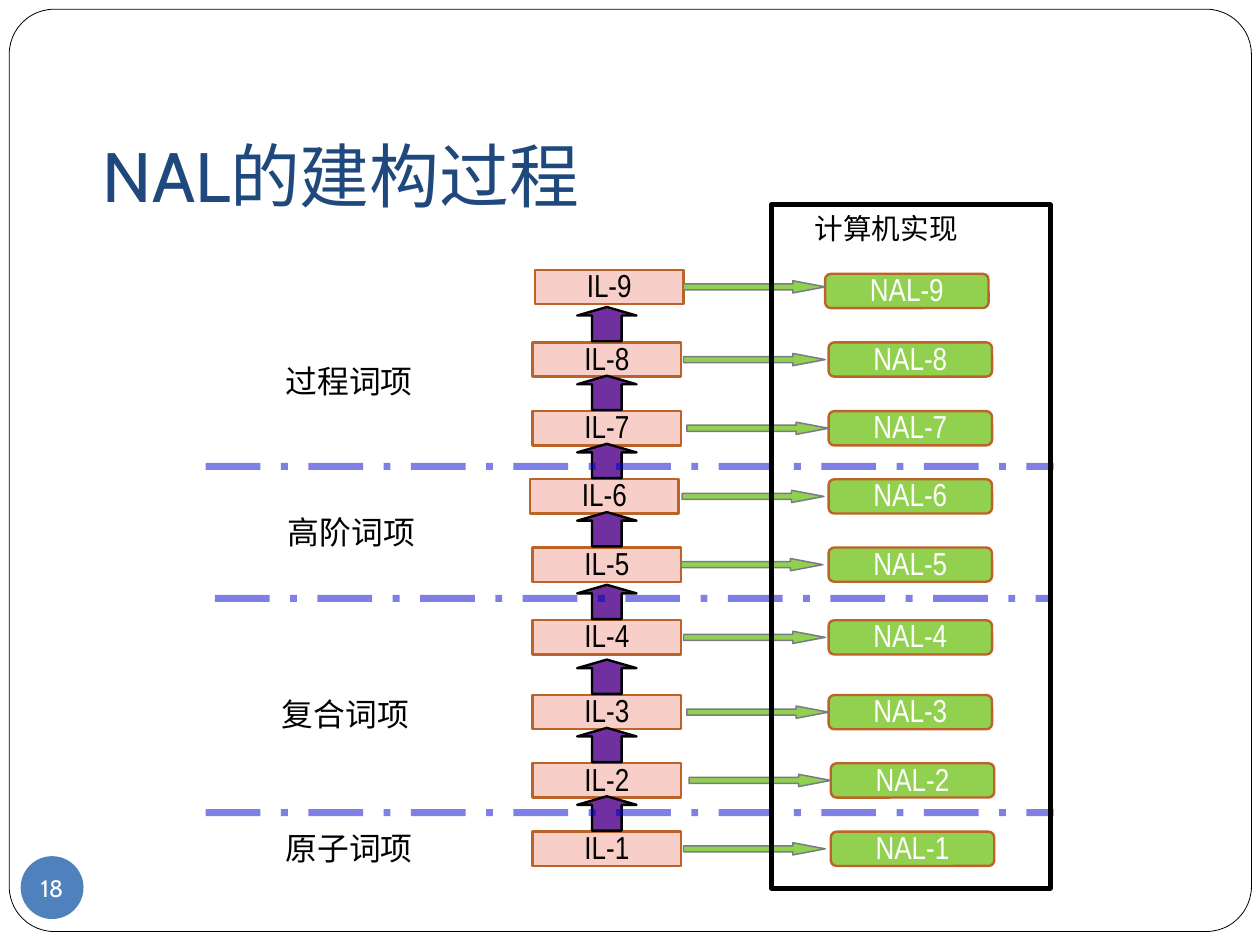
from dataclasses import dataclass

from lxml.etree import SubElement
from pptx import Presentation
from pptx.dml.color import RGBColor
from pptx.enum.dml import MSO_LINE
from pptx.enum.shapes import MSO_CONNECTOR, MSO_SHAPE as SHAPE
from pptx.enum.text import MSO_ANCHOR as ANCHOR, PP_ALIGN as ALIGN
from pptx.oxml.ns import qn
from pptx.util import Pt

TITLE = "NAL的建构过程"
PAGE = "18"
FRAME_LABEL = "计算机实现"

# level, top, IL left, arrow left, NAL left
LEVELS = [
    (9, 169.9, 337, 430.6, 519.8),
    (8, 215.7, 335.5, 430.6, 522),
    (7, 259, 335.5, 432.7, 522),
    (6, 301.9, 334, 429.8, 522),
    (5, 344.9, 335.5, 429.1, 522),
    (4, 390.7, 335.5, 430.6, 522),
    (3, 437.8, 335.5, 432.7, 522),
    (2, 480.8, 335.5, 434.2, 523.4),
    (1, 523.9, 335.5, 430.6, 523.4),
]
# text, left, top
TERMS = [
    ("过程词项", 172.8, 226.6),
    ("高阶词项", 174.2, 321.6),
    ("复合词项", 170.6, 436.1),
    ("原子词项", 172.8, 520.4),
]
# y, from x, to x
DIVIDERS = [(511.9, 129.6, 663.8), (376.9, 135.4, 661.7), (293.8, 129.6, 663.8)]

BOX_H, IL_W, NAL_W = 21.6, 93.6, 103
UP_X, UP_W, UP_RISE = 363.6, 37.4, 22.3
LINK_W, LINK_H = 89.3, 7.7
TOP_NAL_DROP = 2.6


@dataclass(frozen=True)
class Theme:
    title: str = "1F497D"
    badge: str = "4F81BD"
    il: str = "F8CFC8"
    nal: str = "92D050"
    edge: str = "BB6328"
    up: str = "7030A0"
    link_edge: str = "777C84"
    divider: str = "0000CC"
    black: str = "000000"
    white: str = "FFFFFF"
    head_font: str = "Cabin"
    body_font: str = "Arial Narrow"
    frame_font: str = "Arial"
    title_size: int = 44
    body_size: int = 20
    frame_size: int = 18
    page_size: int = 15


T = Theme()


def rgb(color):
    return RGBColor.from_string(color)


def add_shape(s, kind, box, fill=None, line=None, width=1.5, adj=()):
    sp = s.shapes.add_shape(kind, *map(Pt, box))
    sp.shadow.inherit = False
    for i, value in enumerate(adj):
        sp.adjustments[i] = value
    if fill:
        sp.fill.solid()
        sp.fill.fore_color.rgb = rgb(fill)
    else:
        sp.fill.background()
    if line:
        sp.line.color.rgb = rgb(line)
        sp.line.width = Pt(width)
    else:
        sp.line.fill.background()
    return sp


def write(sp, text, size, color, font=T.body_font, align=ALIGN.CENTER,
          anchor=ANCHOR.MIDDLE, insets=(7.2, 3.6, 7.2, 3.6), spacing=0.93):
    tf = sp.text_frame
    tf.word_wrap = True
    tf.vertical_anchor = anchor
    tf.margin_left, tf.margin_top, tf.margin_right, tf.margin_bottom = map(Pt, insets)
    tf.text = text
    p = tf.paragraphs[0]
    p.alignment = align
    p.line_spacing = spacing
    r = p.runs[0]
    r.font.size = Pt(size)
    r.font.name = font
    r.font.color.rgb = rgb(color)


def add_label(s, box, text, size, color, font, anchor=ANCHOR.TOP, **style):
    sp = s.shapes.add_textbox(*map(Pt, box))
    write(sp, text, size, color, font, ALIGN.LEFT, anchor, **style)


def add_divider(s, y, x1, x2):
    line = s.shapes.add_connector(MSO_CONNECTOR.STRAIGHT, Pt(x1), Pt(y), Pt(x2), Pt(y))
    line.line.color.rgb = rgb(T.divider)
    line.line.width = Pt(4.31)
    line.line.dash_style = MSO_LINE.LONG_DASH_DOT
    props = line._element.spPr
    SubElement(next(props.iter(qn("a:srgbClr"))), qn("a:alpha"), val="50000")
    SubElement(props, qn("a:effectLst"))


def main():
    prs = Presentation()
    prs.slide_width, prs.slide_height = Pt(793.75), Pt(595.25)
    s = prs.slides.add_slide(prs.slide_layouts[6])

    add_shape(s, SHAPE.ROUNDED_RECTANGLE, (5.8, 5.8, 782.6, 581),
              T.white, T.black, 0.5, [0.049])
    add_label(s, (56.9, 46.1, 680.4, 99.4), TITLE, T.title_size, T.title,
              T.head_font, ANCHOR.BOTTOM, insets=(7.9, 2.9, 7.9, 7.9))
    badge = add_shape(s, SHAPE.OVAL, (13, 539.3, 39.6, 39.6), T.badge)
    write(badge, PAGE, T.page_size, T.white, T.head_font, insets=(0, 0, 0, 0), spacing=1)

    for level, top, il_x, _, nal_x in LEVELS:
        il = add_shape(s, SHAPE.RECTANGLE, (il_x, top, IL_W, BOX_H), T.il, T.edge)
        write(il, f"IL-{level}", T.body_size, T.black)
        nal_top = top + TOP_NAL_DROP if level == 9 else top
        nal = add_shape(s, SHAPE.ROUNDED_RECTANGLE, (nal_x, nal_top, NAL_W, BOX_H),
                        T.nal, T.edge)
        write(nal, f"NAL-{level}", T.body_size, T.white)

    for level, top, _, link_x, _ in LEVELS:
        if level < 9:
            add_shape(s, SHAPE.UP_ARROW, (UP_X, top - UP_RISE, UP_W, BOX_H),
                      T.up, T.black, adj=[0.5, 0.25])
        link_y = top + (BOX_H - LINK_H) / 2
        add_shape(s, SHAPE.RIGHT_ARROW, (link_x, link_y, LINK_W, LINK_H),
                  T.nal, T.link_edge, 0.94, [0.5, 2.65])

    for divider in DIVIDERS:
        add_divider(s, *divider)
    for text, x, y in TERMS:
        add_label(s, (x, y, 130, 33.8), text, T.body_size, T.black, T.body_font)

    add_shape(s, SHAPE.RECTANGLE, (486, 128.9, 175.7, 430.6), line=T.black, width=2.89)
    add_label(s, (506.2, 131, 133.9, 31), FRAME_LABEL, T.frame_size, T.black, T.frame_font)

    prs.save("out.pptx")


if __name__ == "__main__":
    main()
